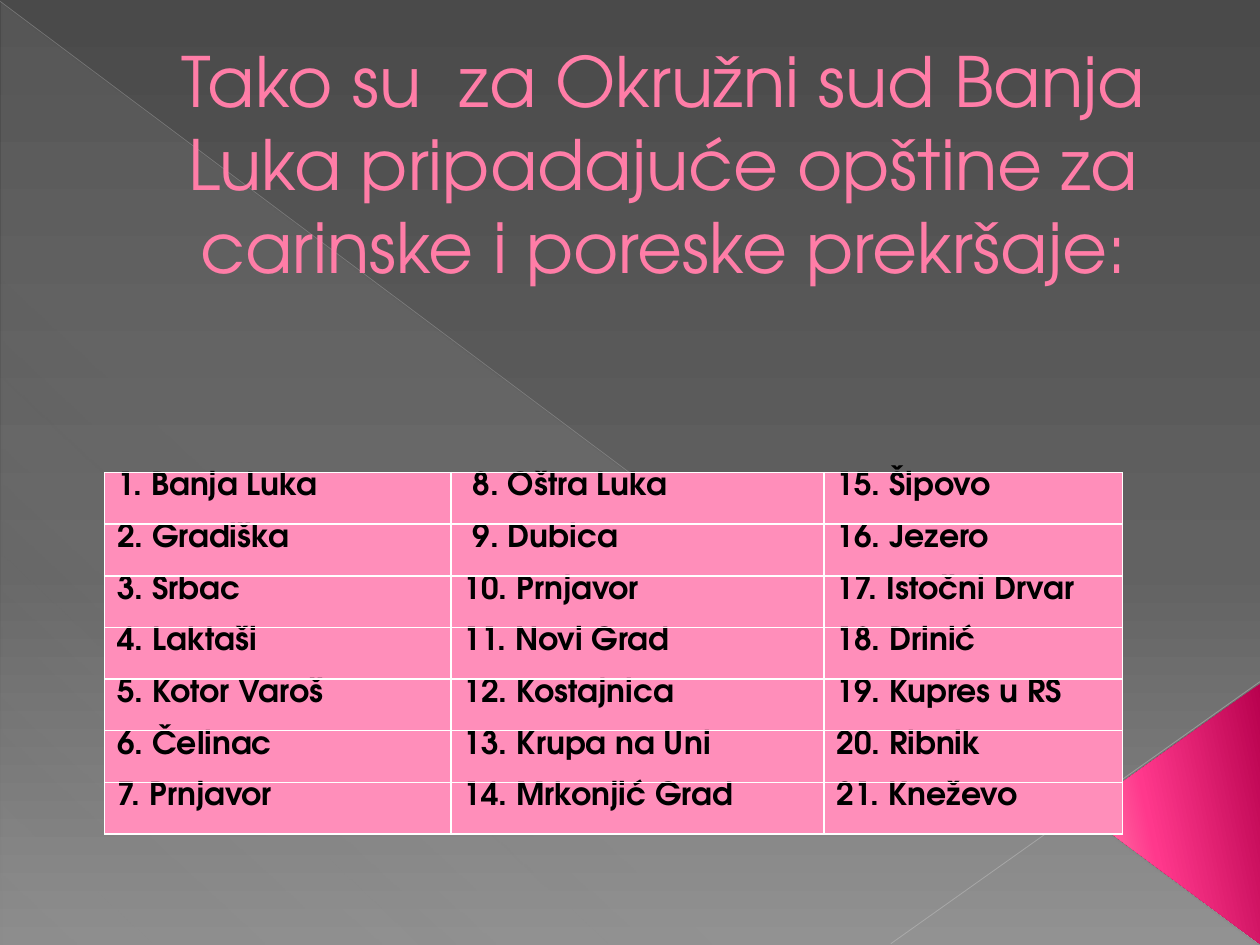
from pptx import Presentation
from pptx.dml.color import RGBColor
from pptx.enum.shapes import MSO_CONNECTOR, MSO_SHAPE
from pptx.enum.text import MSO_ANCHOR, PP_ALIGN
from pptx.oxml.ns import qn
from pptx.util import Inches, Pt
from lxml import etree

STRAIGHT = MSO_CONNECTOR.STRAIGHT
RIGHT_TRIANGLE = MSO_SHAPE.RIGHT_TRIANGLE
TRIANGLE = MSO_SHAPE.ISOSCELES_TRIANGLE

FONT = "TeX Gyre Adventor"
TITLE_PINK = RGBColor(0xFF, 0x7D, 0xA7)
TITLE_OUTLINE = RGBColor(0xB1, 0x27, 0x61)
CELL_PINK = RGBColor(0xFF, 0x8E, 0xBA)
BLACK = RGBColor(0, 0, 0)
WHITE = RGBColor(0xFF, 0xFF, 0xFF)
VEIL = RGBColor(0xD2, 0xD2, 0xD2)

# Gradient stops: position %, colour, opacity %
BACKGROUND_STOPS = [(0, RGBColor(0x4A, 0x4A, 0x4A), 100),
                    (60, RGBColor(0x62, 0x62, 0x62), 100),
                    (100, RGBColor(0x8C, 0x8C, 0x8C), 100)]
VEIL_STOPS = [(0, VEIL, 10), (70, VEIL, 8), (100, VEIL, 1)]
CORNER_STOPS = [(0, RGBColor(0xB8, 0x01, 0x4E), 100),
                (60, RGBColor(0xFF, 0x38, 0x8C), 100),
                (100, RGBColor(0xFF, 0x9C, 0xB9), 100)]

# Thin lines: start, end, colour, width, opacity %
LINES = [((0, 0.01), (9.99, 7.49), RGBColor(0xBF, 0xBF, 0xBF), 0.39, 35),
         ((10, 5.41), (7.07, 7.49), RGBColor(0xC6, 0xC6, 0xC6), 0.47, 45)]

TITLE = ("Tako su\u00a0 za Okružni sud Banja Luka pripadajuće opštine "
         "za carinske i poreske prekršaje:")
MUNICIPALITIES = [
    ("1. Banja Luka", " 8. Oštra Luka", "15. Šipovo"),
    ("2. Gradiška", " 9. Dubica", "16. Jezero"),
    ("3. Srbac", "10. Prnjavor", "17. Istočni Drvar"),
    ("4. Laktaši", "11. Novi Grad", "18. Drinić"),
    ("5. Kotor Varoš", "12. Kostajnica", "19. Kupres u RS"),
    ("6. Čelinac", "13. Krupa na Uni", "20. Ribnik"),
    ("7. Prnjavor", "14. Mrkonjić Grad", "21. Kneževo"),
]
COLUMN_WIDTHS = [2.75, 2.96, 2.37]
ROW_HEIGHT = 0.41


def add_color(parent, color, opacity=100):
    element = etree.SubElement(parent, qn("a:srgbClr"), val=str(color))
    if opacity < 100:
        etree.SubElement(element, qn("a:alpha"), val=str(opacity * 1000))


def set_gradient(fill, owner, stops, angle):
    fill.gradient()
    gradient = next(owner.iter(qn("a:gradFill")))
    gradient.set("rotWithShape", "1")
    stop_list = gradient.find(qn("a:gsLst"))
    for old_stop in list(stop_list):
        stop_list.remove(old_stop)
    for position, color, opacity in stops:
        stop = etree.SubElement(stop_list, qn("a:gs"), pos=str(position * 1000))
        add_color(stop, color, opacity)
    gradient.find(qn("a:lin")).set("ang", str(angle * 60000))


def add_line(parent, tag, color, width, opacity=100):
    line = etree.SubElement(parent, qn(tag), w=str(Pt(width)))
    add_color(etree.SubElement(line, qn("a:solidFill")), color, opacity)
    return line


def add_gradient_shape(slide, kind, box, stops, angle):
    shape = slide.shapes.add_shape(kind, *map(Inches, box))
    shape.shadow.inherit = False
    shape.line.fill.background()
    set_gradient(shape.fill, shape.element, stops, angle)
    return shape


def add_run(paragraph, text, size, color, bold=False):
    run = paragraph.add_run()
    run.text = text
    font = run.font
    font.name, font.size, font.bold = FONT, Pt(size), bold
    font.color.rgb = color
    return run


def build_decoration(slide):
    set_gradient(slide.background.fill, slide.element, BACKGROUND_STOPS, 90)
    add_gradient_shape(slide, RIGHT_TRIANGLE, (0.01, 0.02, 9.98, 7.48),
                       VEIL_STOPS, 133)
    for start, end, color, width, opacity in LINES:
        connector = slide.shapes.add_connector(STRAIGHT, *map(Inches, start + end))
        properties = connector.element.spPr
        add_line(properties, "a:ln", color, width, opacity)
        etree.SubElement(properties, qn("a:effectLst"))
    corner = add_gradient_shape(slide, TRIANGLE, (8.26, 5.75, 2.07, 1.42),
                                CORNER_STOPS, 258)
    corner.adjustments[0] = 0.51
    corner.rotation = 270


def build_title(slide):
    box = slide.shapes.add_textbox(*map(Inches, (0.59, 0.25, 8.82, 2.75)))
    frame = box.text_frame
    frame.word_wrap = True
    frame.vertical_anchor = MSO_ANCHOR.TOP
    paragraph = frame.paragraphs[0]
    paragraph.alignment = PP_ALIGN.CENTER
    paragraph._p.get_or_add_pPr().set("marL", str(Inches(0.53)))
    run = add_run(paragraph, TITLE, 39.6, TITLE_PINK)
    properties = run.font._element
    properties.insert(0, add_line(properties, "a:ln", TITLE_OUTLINE, 0.5))


def build_table(slide):
    rows = len(MUNICIPALITIES)
    frame = slide.shapes.add_table(
        rows, len(COLUMN_WIDTHS), Inches(0.83), Inches(3.75),
        Inches(sum(COLUMN_WIDTHS)), Inches(ROW_HEIGHT * rows))
    table = frame.table
    table.first_row = table.horz_banding = False
    for column, width in zip(table.columns, COLUMN_WIDTHS):
        column.width = Inches(width)
    for row, names in zip(table.rows, MUNICIPALITIES):
        row.height = Inches(ROW_HEIGHT)
        for cell, name in zip(row.cells, names):
            cell.margin_top = cell.margin_bottom = 0
            properties = cell._tc.get_or_add_tcPr()
            for side in ("a:lnL", "a:lnR", "a:lnT", "a:lnB"):
                add_line(properties, side, WHITE, 1)
            cell.fill.solid()
            cell.fill.fore_color.rgb = CELL_PINK
            add_run(cell.text_frame.paragraphs[0], name, 18, BLACK, bold=True)


def main():
    presentation = Presentation()
    presentation.slide_width, presentation.slide_height = Inches(10), Inches(7.5)
    slide = presentation.slides.add_slide(presentation.slide_layouts[6])
    build_decoration(slide)
    build_title(slide)
    build_table(slide)
    presentation.save("out.pptx")


if __name__ == "__main__":
    main()
